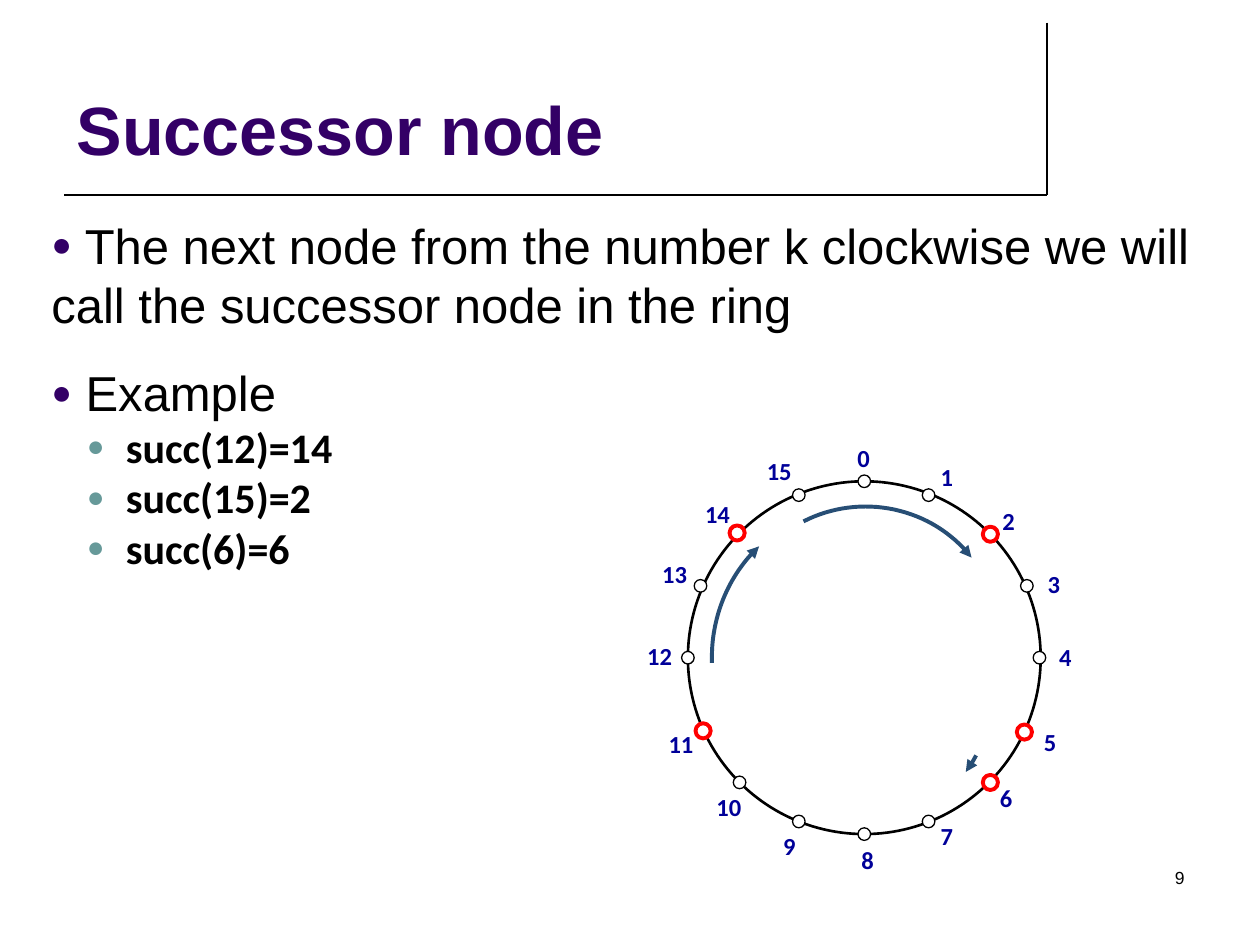
import math
from dataclasses import dataclass

import lxml.etree
import pptx
import pptx.dml.color
import pptx.enum.shapes
import pptx.enum.text
import pptx.oxml.ns
import pptx.util

Inches = pptx.util.Inches
Pt = pptx.util.Pt
Align = pptx.enum.text.PP_ALIGN
Anchor = pptx.enum.text.MSO_ANCHOR


@dataclass(frozen=True)
class Theme:
    ink: str = "000000"
    paper: str = "FFFFFF"
    title: str = "330066"
    sub_bullet: str = "669999"
    label: str = "000099"
    active: str = "FF0000"
    arrow: str = "274E75"
    font: str = "Arial"
    label_font: str = "Calibri"
    title_size: float = 39
    body_size: float = 28
    example_size: float = 24
    label_size: float = 14
    page_size: float = 10


@dataclass(frozen=True)
class Node:
    number: int
    x: float
    y: float
    label_left: float
    label_top: float
    active: bool = False


@dataclass(frozen=True)
class Arc:
    x: float
    y: float
    radius_x: float
    radius_y: float
    start: float
    end: float


@dataclass(frozen=True)
class Bullet:
    text: str
    color: str
    size: float
    font: str
    bold: bool = False
    margin: float = 0
    indent: float = 0
    before: float = 0


THEME = Theme()

NODES = [
    Node(0, 6.86, 3.82, 6.62, 3.52),
    Node(1, 7.37, 3.93, 7.28, 3.67),
    Node(2, 7.86, 4.24, 7.77, 4.02, True),
    Node(3, 8.15, 4.65, 8.13, 4.52),
    Node(4, 8.25, 5.22, 8.22, 5.10),
    Node(5, 8.13, 5.81, 8.10, 5.77, True),
    Node(6, 7.86, 6.21, 7.75, 6.22, True),
    Node(7, 7.37, 6.52, 7.28, 6.52),
    Node(8, 6.86, 6.62, 6.65, 6.71),
    Node(9, 6.34, 6.52, 6.03, 6.60),
    Node(10, 5.87, 6.21, 5.55, 6.29),
    Node(11, 5.58, 5.80, 5.17, 5.79, True),
    Node(12, 5.46, 5.22, 5.00, 5.09),
    Node(13, 5.56, 4.65, 5.12, 4.44),
    Node(14, 5.85, 4.23, 5.46, 3.96, True),
    Node(15, 6.34, 3.93, 5.95, 3.62),
]

ARCS = [
    Arc(6.76, 5.22, 1.11, 1.18, 178, 228.5),
    Arc(6.87, 5.03, 1.05, 1.01, 242, 323.2),
    Arc(6.81, 5.54, 1.05, 1.01, 26.8, 35.5),
]

EXAMPLES = ["succ(12)=14", "succ(15)=2", "succ(6)=6"]
BULLETS = [
    Bullet(" The next node from the number k clockwise we will call the successor node in the ring",
           THEME.title, THEME.body_size, THEME.font),
    Bullet(" Example", THEME.title, THEME.body_size, THEME.font, before=17),
] + [
    Bullet(example, THEME.sub_bullet, THEME.example_size, THEME.label_font,
           bold=True, margin=0.59, indent=-0.31)
    for example in EXAMPLES
]


def rgb(color: str) -> pptx.dml.color.RGBColor:
    return pptx.dml.color.RGBColor.from_string(color)


def add_element(parent, tag: str, **attributes: str):
    element = lxml.etree.SubElement(parent, pptx.oxml.ns.qn(tag))
    for name, value in attributes.items():
        element.set(name, value)
    return element


def write(paragraph, text: str, *, size: float, font: str = THEME.font,
          color: str = THEME.ink, bold: bool = False, align=Align.LEFT) -> None:
    paragraph.alignment = align
    run = paragraph.add_run()
    run.text = text
    run.font.size = Pt(size)
    run.font.name = font
    run.font.bold = bold
    run.font.color.rgb = rgb(color)


def add_frame(slide, left: float, top: float, width: float, height: float,
              anchor=Anchor.TOP, padded: bool = True):
    frame = slide.shapes.add_textbox(
        Inches(left), Inches(top), Inches(width), Inches(height)).text_frame
    frame.word_wrap = True
    frame.vertical_anchor = anchor
    if not padded:
        frame.margin_left = frame.margin_right = 0
        frame.margin_top = frame.margin_bottom = 0
    return frame


def add_rule(slide, x1: float, y1: float, x2: float, y2: float) -> None:
    rule = slide.shapes.add_connector(
        pptx.enum.shapes.MSO_CONNECTOR.STRAIGHT,
        Inches(x1), Inches(y1), Inches(x2), Inches(y2))
    rule.line.color.rgb = rgb(THEME.ink)
    rule.line.width = Pt(1)
    add_element(rule._element.spPr, "a:effectLst")


def add_circle(slide, x: float, y: float, diameter: float, line: str,
               weight: float, fill: str | None = None) -> None:
    circle = slide.shapes.add_shape(
        pptx.enum.shapes.MSO_SHAPE.OVAL,
        Inches(x - diameter / 2), Inches(y - diameter / 2),
        Inches(diameter), Inches(diameter))
    circle.shadow.inherit = False
    if fill:
        circle.fill.solid()
        circle.fill.fore_color.rgb = rgb(fill)
    else:
        circle.fill.background()
    circle.line.color.rgb = rgb(line)
    circle.line.width = Pt(weight)


def add_arc(slide, arc: Arc, steps: int = 32) -> None:
    angles = [math.radians(arc.start + (arc.end - arc.start) * step / steps)
              for step in range(steps + 1)]
    points = [(Inches(arc.x + arc.radius_x * math.cos(angle)),
               Inches(arc.y + arc.radius_y * math.sin(angle))) for angle in angles]
    builder = slide.shapes.build_freeform(*points[0])
    builder.add_line_segments(points[1:], close=False)
    curve = builder.convert_to_shape()
    curve.shadow.inherit = False
    curve.fill.background()
    curve.line.color.rgb = rgb(THEME.arrow)
    curve.line.width = Pt(2.25)
    add_element(curve.line._get_or_add_ln(), "a:tailEnd", type="triangle")


def add_bullet(paragraph, bullet: Bullet) -> None:
    properties = paragraph._p.get_or_add_pPr()
    properties.set("marL", str(Inches(bullet.margin)))
    properties.set("indent", str(Inches(bullet.indent)))
    if bullet.before:
        paragraph.space_before = Pt(bullet.before)
    add_element(add_element(properties, "a:buClr"), "a:srgbClr", val=bullet.color)
    add_element(properties, "a:buSzPct", val="70000")
    add_element(properties, "a:buFont", typeface=THEME.font)
    add_element(properties, "a:buChar", char="●")
    write(paragraph, bullet.text, size=bullet.size, font=bullet.font, bold=bullet.bold)


def add_node(slide, node: Node) -> None:
    if node.active:
        add_circle(slide, node.x, node.y, 0.12, THEME.active, 2.25, THEME.paper)
    else:
        add_circle(slide, node.x, node.y, 0.1, THEME.ink, 0.75, THEME.paper)
    label = add_frame(slide, node.label_left, node.label_top, 0.47, 0.23,
                      Anchor.MIDDLE, padded=False)
    write(label.paragraphs[0], str(node.number), size=THEME.label_size,
          font=THEME.label_font, color=THEME.label, bold=True, align=Align.CENTER)


def main() -> None:
    deck = pptx.Presentation()
    deck.slide_width, deck.slide_height = Inches(10), Inches(7.5)
    slide = deck.slides.add_slide(deck.slide_layouts[6])

    add_rule(slide, 8.31, 0.18, 8.31, 1.55)
    add_rule(slide, 0.51, 1.55, 8.31, 1.55)
    page = add_frame(slide, 7.17, 6.83, 2.33, 0.5)
    write(page.paragraphs[0], "9", size=THEME.page_size, align=Align.RIGHT)
    title = add_frame(slide, 0.51, 0.13, 7.8, 1.26, Anchor.BOTTOM)
    write(title.paragraphs[0], "Successor node", size=THEME.title_size,
          color=THEME.title, bold=True)

    body = add_frame(slide, 0.31, 1.66, 9.69, 3.67)
    for index, bullet in enumerate(BULLETS):
        add_bullet(body.add_paragraph() if index else body.paragraphs[0], bullet)

    add_circle(slide, 6.86, 5.22, 2.8, THEME.ink, 1.5)
    for node in NODES:
        add_node(slide, node)
    for arc in ARCS:
        add_arc(slide, arc)

    deck.save("out.pptx")


if __name__ == "__main__":
    main()
